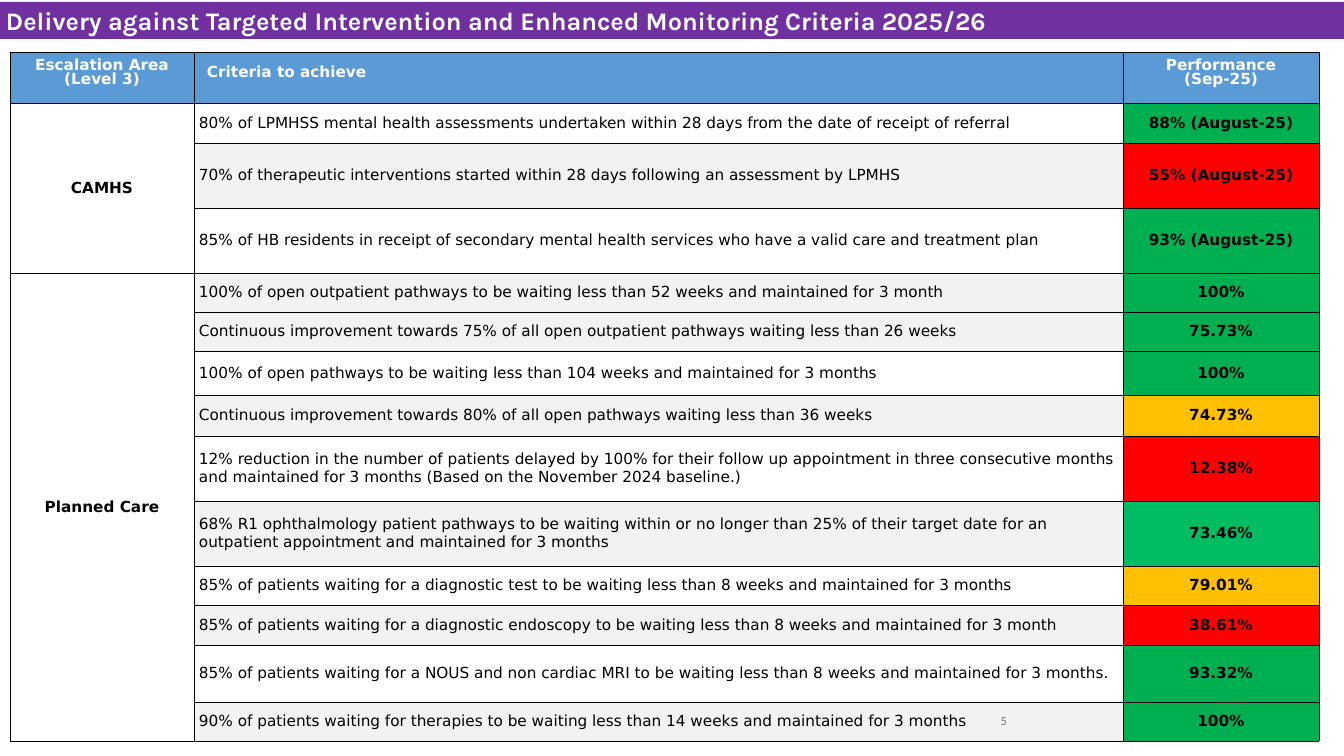
from dataclasses import dataclass

from lxml.etree import SubElement
from pptx import Presentation
from pptx.dml.color import RGBColor
from pptx.enum.shapes import MSO_SHAPE
from pptx.enum.text import MSO_ANCHOR, MSO_AUTO_SIZE, PP_ALIGN
from pptx.oxml.ns import qn
from pptx.table import Table, _Cell
from pptx.text.text import _Paragraph
from pptx.util import Emu, Pt

EMU_PER_PX = 14960
SLIDE_WIDTH, SLIDE_HEIGHT = 1344, 756

WHITE = RGBColor(0xFF, 0xFF, 0xFF)
BLACK = RGBColor(0x00, 0x00, 0x00)
PURPLE = RGBColor(0x70, 0x30, 0xA0)
BLUE = RGBColor(0x5B, 0x9B, 0xD5)
PALE_GREY = RGBColor(0xF2, 0xF2, 0xF2)
MID_GREY = RGBColor(0x79, 0x79, 0x79)
GREEN = RGBColor(0x00, 0xB0, 0x50)
LIGHT_GREEN = RGBColor(0x00, 0xBC, 0x62)
AMBER = RGBColor(0xFF, 0xC0, 0x00)
RED = RGBColor(0xFF, 0x00, 0x00)

TABLE_FONT = "DejaVu Sans"
TABLE_FONT_SIZE = 18
HEADER_LINE = Pt(8)
HEADER_HEIGHT = 51
COLUMN_WIDTHS = (184, 929, 196)


@dataclass(frozen=True)
class Heading:
    lines: tuple[str, ...]
    alignment: PP_ALIGN


@dataclass(frozen=True)
class Criterion:
    text: str
    performance: str
    status: RGBColor
    height: int
    background: RGBColor = WHITE


@dataclass(frozen=True)
class EscalationArea:
    name: str
    criteria: tuple[Criterion, ...]


HEADINGS = (
    Heading(("Escalation Area", "(Level 3)"), PP_ALIGN.CENTER),
    Heading(("Criteria to achieve",), PP_ALIGN.LEFT),
    Heading(("Performance", "(Sep-25)"), PP_ALIGN.CENTER),
)

AREAS = (
    EscalationArea("CAMHS", (
        Criterion("80% of LPMHSS mental health assessments undertaken within 28 days from the date of receipt of referral",
                  "88% (August-25)", GREEN, 40),
        Criterion("70% of therapeutic interventions started within 28 days following an assessment by LPMHS",
                  "55% (August-25)", RED, 65, PALE_GREY),
        Criterion("85% of HB residents in receipt of secondary mental health services who have a valid care and treatment plan",
                  "93% (August-25)", GREEN, 65),
    )),
    EscalationArea("Planned Care", (
        Criterion("100% of open outpatient pathways to be waiting less than 52 weeks and maintained for 3 month",
                  "100%", GREEN, 39, PALE_GREY),
        Criterion("Continuous improvement towards 75% of all open outpatient pathways waiting less than 26 weeks",
                  "75.73%", GREEN, 39, PALE_GREY),
        Criterion("100% of open pathways to be waiting less than 104 weeks and maintained for 3 months",
                  "100%", GREEN, 44),
        Criterion("Continuous improvement towards 80% of all open pathways waiting less than 36 weeks",
                  "74.73%", AMBER, 41, PALE_GREY),
        Criterion("12% reduction in the number of patients delayed by 100% for their follow up appointment in three "
                  "consecutive months and maintained for 3 months (Based on the November 2024 baseline.)",
                  "12.38%", RED, 65),
        Criterion("68% R1 ophthalmology patient pathways to be waiting within or no longer than 25% of their target "
                  "date for an outpatient appointment and maintained for 3 months",
                  "73.46%", LIGHT_GREEN, 65, PALE_GREY),
        Criterion("85% of patients waiting for a diagnostic test to be waiting less than 8 weeks and maintained for 3 months",
                  "79.01%", AMBER, 39),
        Criterion("85% of patients waiting for a diagnostic endoscopy to be waiting less than 8 weeks and maintained for 3 month",
                  "38.61%", RED, 40, PALE_GREY),
        Criterion("85% of patients waiting for a NOUS and non cardiac MRI to be waiting less than 8 weeks and maintained for 3 months.",
                  "93.32%", GREEN, 57),
        Criterion("90% of patients waiting for therapies to be waiting less than 14 weeks and maintained for 3 months",
                  "100%", GREEN, 39, PALE_GREY),
    )),
)


def px(length: int) -> Emu:
    return Emu(length * EMU_PER_PX)


def add_run(paragraph: _Paragraph, text: str, font: str, size: float, color: RGBColor, bold: bool) -> None:
    run = paragraph.add_run()
    run.text = text
    run.font.name = font
    run.font.size = Pt(size)
    run.font.bold = bold
    run.font.color.rgb = color


def set_margins(box, horizontal: int, vertical: int) -> None:
    box.margin_left = box.margin_right = px(horizontal)
    box.margin_top = box.margin_bottom = px(vertical)


def style_cell(cell: _Cell, fill: RGBColor, horizontal: int = 5, vertical: int = 5) -> None:
    cell.vertical_anchor = MSO_ANCHOR.MIDDLE
    set_margins(cell, horizontal, vertical)
    properties = cell._tc.get_or_add_tcPr()
    for side in ("a:lnL", "a:lnR", "a:lnT", "a:lnB"):
        border = SubElement(properties, qn(side), w=str(Pt(1)))
        border_fill = SubElement(border, qn("a:solidFill"))
        SubElement(border_fill, qn("a:srgbClr"), val=str(BLACK))
    cell.fill.solid()
    cell.fill.fore_color.rgb = fill


def write_cell(cell: _Cell, text: str, alignment: PP_ALIGN, bold: bool) -> None:
    paragraph = cell.text_frame.paragraphs[0]
    paragraph.alignment = alignment
    add_run(paragraph, text, TABLE_FONT, TABLE_FONT_SIZE, BLACK, bold)


def write_heading(cell: _Cell, heading: Heading) -> None:
    style_cell(cell, BLUE, 13, 7)
    frame = cell.text_frame
    for index, line in enumerate(heading.lines):
        paragraph = frame.add_paragraph() if index else frame.paragraphs[0]
        paragraph.alignment = heading.alignment
        paragraph.line_spacing = HEADER_LINE
        if index:
            paragraph.space_before = HEADER_LINE
        add_run(paragraph, line, TABLE_FONT, TABLE_FONT_SIZE, WHITE, True)


def fill_area(table: Table, area: EscalationArea, first_row: int) -> int:
    next_row = first_row + len(area.criteria)
    for row, criterion in enumerate(area.criteria, first_row):
        table.rows[row].height = px(criterion.height)
        fills = (WHITE, criterion.background, criterion.status)
        for column, fill in enumerate(fills):
            style_cell(table.cell(row, column), fill)
        write_cell(table.cell(row, 1), criterion.text, PP_ALIGN.LEFT, False)
        write_cell(table.cell(row, 2), criterion.performance, PP_ALIGN.CENTER, True)
    area_cell = table.cell(first_row, 0)
    area_cell.merge(table.cell(next_row - 1, 0))
    write_cell(area_cell, area.name, PP_ALIGN.CENTER, True)
    return next_row


def add_criteria_table(slide) -> None:
    criteria = [criterion for area in AREAS for criterion in area.criteria]
    height = HEADER_HEIGHT + sum(criterion.height for criterion in criteria)
    table = slide.shapes.add_table(
        len(criteria) + 1, len(COLUMN_WIDTHS), px(10), px(52), px(sum(COLUMN_WIDTHS)), px(height)
    ).table
    table.first_row = table.horz_banding = False
    table.rows[0].height = px(HEADER_HEIGHT)
    for column, (width, heading) in enumerate(zip(COLUMN_WIDTHS, HEADINGS)):
        table.columns[column].width = px(width)
        write_heading(table.cell(0, column), heading)
    row = 1
    for area in AREAS:
        row = fill_area(table, area, row)


def add_page_number(slide) -> None:
    frame = slide.shapes.add_textbox(px(771), px(700), px(246), px(40)).text_frame
    frame.word_wrap = True
    frame.vertical_anchor = MSO_ANCHOR.MIDDLE
    set_margins(frame, 10, 5)
    paragraph = frame.paragraphs[0]
    paragraph.alignment = PP_ALIGN.RIGHT
    add_run(paragraph, "5", "Calibri", 14.8, MID_GREY, False)


def add_title(slide) -> None:
    banner = slide.shapes.add_shape(MSO_SHAPE.RECTANGLE, px(0), px(2), px(SLIDE_WIDTH), px(37))
    banner.shadow.inherit = False
    banner.fill.solid()
    banner.fill.fore_color.rgb = PURPLE
    banner.line.fill.background()
    frame = banner.text_frame
    frame.word_wrap = True
    frame.auto_size = MSO_AUTO_SIZE.SHAPE_TO_FIT_TEXT
    frame.vertical_anchor = MSO_ANCHOR.TOP
    set_margins(frame, 6, 3)
    paragraph = frame.paragraphs[0]
    paragraph.alignment = PP_ALIGN.JUSTIFY
    add_run(paragraph, "Delivery against Targeted Intervention and Enhanced Monitoring Criteria 2025/26",
            "Karla", 29.7, WHITE, True)


def main() -> None:
    presentation = Presentation()
    presentation.slide_width = px(SLIDE_WIDTH)
    presentation.slide_height = px(SLIDE_HEIGHT)
    slide = presentation.slides.add_slide(presentation.slide_layouts[6])
    add_criteria_table(slide)
    add_page_number(slide)
    add_title(slide)
    presentation.save("out.pptx")


if __name__ == "__main__":
    main()
